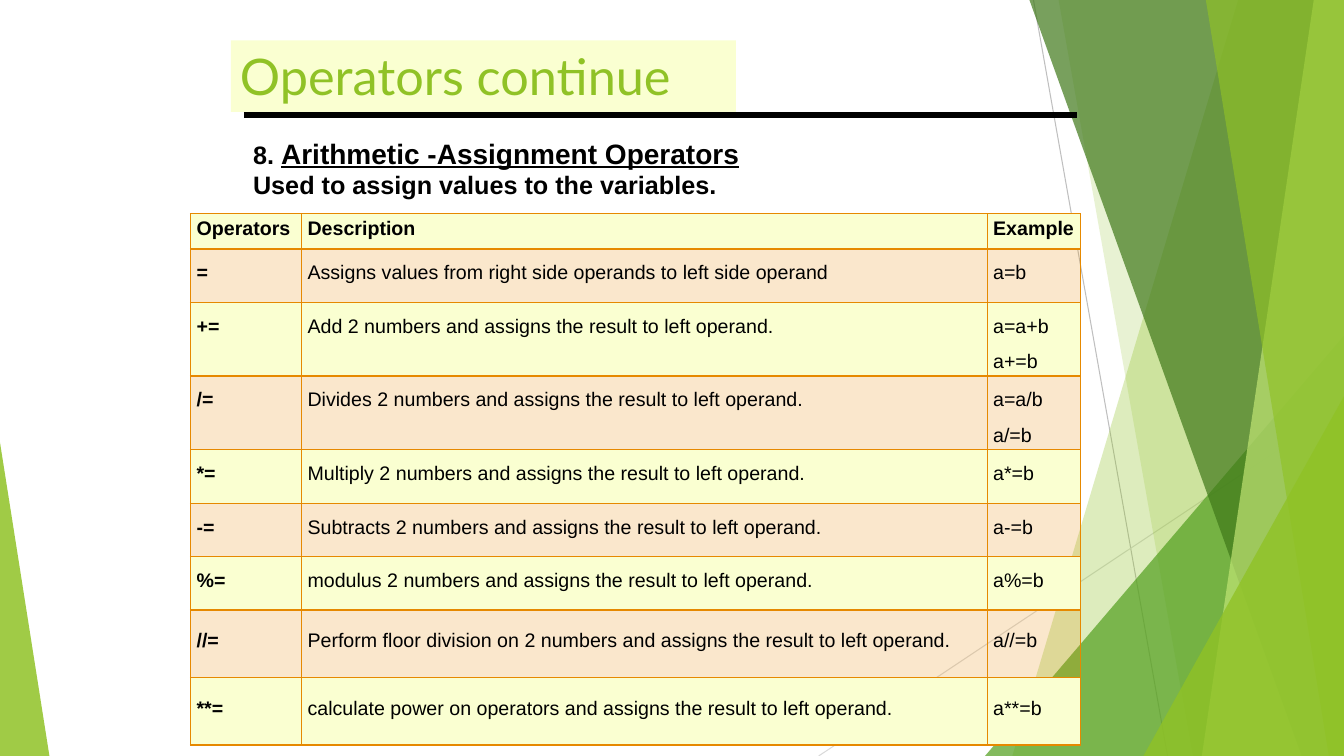
"""Build the slide on Python's arithmetic assignment operators."""
from lxml import etree
from pptx import Presentation
from pptx.dml.color import RGBColor
from pptx.enum.shapes import MSO_CONNECTOR, MSO_SHAPE
from pptx.enum.text import MSO_ANCHOR, PP_ALIGN
from pptx.oxml.ns import qn
from pptx.util import Inches, Pt

STRAIGHT = MSO_CONNECTOR.STRAIGHT
RECTANGLE = MSO_SHAPE.RECTANGLE
TRIANGLE = MSO_SHAPE.ISOSCELES_TRIANGLE
MIDDLE, LEFT = MSO_ANCHOR.MIDDLE, PP_ALIGN.LEFT
WIDTH, HEIGHT = 13.33, 7.5
GREEN, CREAM, ORANGE, BLACK = "90C226", "FAFFD1", "E68900", "000000"

TITLE = "Operators continue"
HEADING = [("8. ", 18, False), ("Arithmetic -Assignment Operators", 20, True)]
SUBHEADING = "Used to assign values to the variables."
ROWS = [
    ("Operators", "Description", "Example"),
    ("=", "Assigns values from right side operands to left side operand", "a=b"),
    ("+=", "Add 2 numbers and assigns the result to left operand.", "a=a+b\na+=b"),
    ("/=", "Divides 2 numbers and assigns the result to left operand.", "a=a/b\na/=b"),
    ("*=", "Multiply 2 numbers and assigns the result to left operand.", "a*=b"),
    ("-=", "Subtracts 2 numbers and assigns the result to left operand.", "a-=b"),
    ("%=", "modulus 2 numbers and assigns the result to left operand.", "a%=b"),
    ("//=", "Perform floor division on 2 numbers and assigns the result to left operand.",
     "a//=b"),
    ("**=", "calculate power on operators and assigns the result to left operand.", "a**=b"),
]
COLUMN_WIDTHS = [1.1, 6.8, 0.93]
ROW_HEIGHTS = [0.35, 0.53, 0.73, 0.73, 0.53, 0.53, 0.53, 0.67, 0.67]
TOP_MARGINS = [0.04] + [0.13] * 6 + [0.2] * 2

THIN_LINES = [(10.25, 0, 11.58, HEIGHT, "BFBFBF"), (WIDTH, 4.03, 8.12, HEIGHT, "D9D9D9")]
# (kind, geometry, colour, opacity): bands give top left, bottom left; triangles give left, top, width, apex
FACETS = [
    ("band", (12.28, 10.04), GREEN, 30),
    ("band", (10.5, 11.83), GREEN, 20),
    ("triangle", (9.77, 3.33, 3.56, 1), "54A021", 72),
    ("band", (10.21, 12.91), "3F7819", 70),
    ("band", (13.03, 11.92), "C0E474", 70),
    ("band", (11.96, 13.18), GREEN, 65),
    ("triangle", (11.34, 3.93, 1.99, 1), GREEN, 80),
    ("triangle", (0, 4.39, 0.49, 0), GREEN, 85),
]


def rgb(value):
    return RGBColor.from_string(value)


def box(*lengths):
    return [Inches(length) for length in lengths]


def paint(target, element, colour, opacity=100):
    target.fill.solid()
    target.fill.fore_color.rgb = rgb(colour)
    if opacity < 100:
        colour_node = next(element.iter(qn("a:srgbClr")))
        etree.SubElement(colour_node, qn("a:alpha"), val=str(opacity * 1000))


def paint_shape(shape, colour, opacity=100):
    shape.shadow.inherit = False
    paint(shape, shape._element.spPr, colour, opacity)
    shape.line.fill.background()


def add_line(shapes, start_x, start_y, end_x, end_y, colour, points):
    line = shapes.add_connector(STRAIGHT, *box(start_x, start_y, end_x, end_y))
    line.line.color.rgb = rgb(colour)
    line.line.width = Pt(points)
    etree.SubElement(line._element.spPr, qn("a:effectLst"))


def add_facet(shapes, kind, geometry, colour, opacity):
    if kind == "band":
        top_left, bottom_left = geometry
        builder = shapes.build_freeform(*box(top_left, 0), scale=1.0)
        corners = [(WIDTH, 0), (WIDTH, HEIGHT), (bottom_left, HEIGHT)]
        builder.add_line_segments([box(*corner) for corner in corners], close=True)
        shape = builder.convert_to_shape()
    else:
        left, top, width, apex = geometry
        shape = shapes.add_shape(TRIANGLE, *box(left, top, width, HEIGHT - top))
        shape.adjustments[0] = apex
    paint_shape(shape, colour, opacity)


def style(font, size, colour=BLACK, bold=False, name="Arial"):
    font.size, font.bold, font.name = Pt(size), bold, name
    font.color.rgb = rgb(colour)


def clear_margins(frame):
    frame.margin_left = frame.margin_right = frame.margin_bottom = 0
    frame.margin_top = Inches(0.01)
    frame.word_wrap = True


def add_title(slide):
    paint_shape(slide.shapes.add_shape(RECTANGLE, *box(2.29, 0.4, 5.01, 0.71)), CREAM)
    title = slide.shapes.title
    title.left, title.top, title.width, title.height = box(2.38, 0.13, 4.64, 1.23)
    slide.shapes._spTree.append(title._element)
    frame = title.text_frame
    clear_margins(frame)
    frame.vertical_anchor = MIDDLE
    frame.text = TITLE
    frame.paragraphs[0].alignment = LEFT
    style(frame.paragraphs[0].font, 36, GREEN, name="Lato")
    add_line(slide.shapes, 2.42, 1.14, 10.68, 1.14, BLACK, 3.96)


def add_heading(shapes):
    frame = shapes.add_textbox(*box(2.51, 1.34, 5.99, 0.65)).text_frame
    clear_margins(frame)
    heading, subheading = frame.paragraphs[0], frame.add_paragraph()
    for text, size, underlined in HEADING:
        run = heading.add_run()
        run.text = text
        style(run.font, size, bold=True)
        run.font.underline = underlined
    subheading.text = SUBHEADING
    style(subheading.font, 18, bold=True)


def set_borders(cell, row):
    properties = cell._tc.get_or_add_tcPr()
    widths = {"lnL": 1, "lnR": 1, "lnT": 2.25 if row == 1 else 1, "lnB": 2.25 if row == 0 else 1}
    for position, (side, points) in enumerate(widths.items()):
        border = etree.Element(qn("a:" + side), w=str(Pt(points)))
        fill = etree.SubElement(border, qn("a:solidFill"))
        etree.SubElement(fill, qn("a:srgbClr"), val=ORANGE)
        properties.insert(position, border)


def fill_cell(cell, text, row, column):
    cell.margin_left, cell.margin_top = box(0.06, TOP_MARGINS[row])
    cell.margin_right = cell.margin_bottom = 0
    cell.text_frame.text = text
    for index, paragraph in enumerate(cell.text_frame.paragraphs):
        style(paragraph.font, 14, bold=row == 0 or column == 0)
        paragraph.space_before = Pt(9.6 if index else 0)
    colour, opacity = (ORANGE, 20) if row % 2 else (CREAM, 100)
    paint(cell, cell._tc.get_or_add_tcPr(), colour, opacity)
    set_borders(cell, row)


def add_operator_table(shapes):
    size = box(1.89, 2.12, sum(COLUMN_WIDTHS), sum(ROW_HEIGHTS))
    table = shapes.add_table(len(ROWS), len(COLUMN_WIDTHS), *size).table
    table.first_row = table.horz_banding = False
    for column, width in zip(table.columns, COLUMN_WIDTHS):
        column.width = Inches(width)
    for row, height in zip(table.rows, ROW_HEIGHTS):
        row.height = Inches(height)
    for row, texts in enumerate(ROWS):
        for column, text in enumerate(texts):
            fill_cell(table.cell(row, column), text, row, column)


def main():
    presentation = Presentation()
    presentation.slide_width, presentation.slide_height = box(WIDTH, HEIGHT)
    slide = presentation.slides.add_slide(presentation.slide_layouts.get_by_name("Title Only"))
    for *ends, colour in THIN_LINES:
        add_line(slide.shapes, *ends, colour, 0.75)
    for facet in FACETS:
        add_facet(slide.shapes, *facet)
    add_title(slide)
    add_heading(slide.shapes)
    add_operator_table(slide.shapes)
    presentation.save("out.pptx")


if __name__ == "__main__":
    main()
